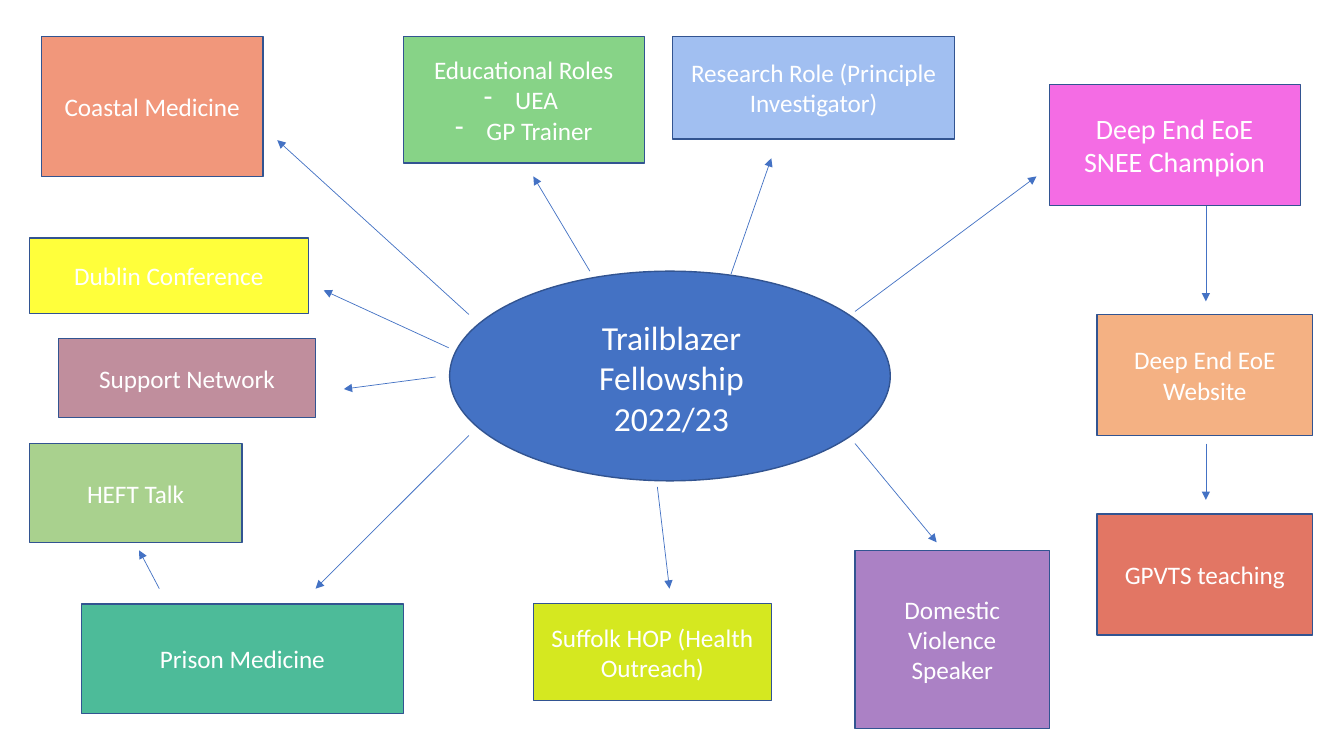
import dataclasses

import lxml.etree
import pptx
import pptx.dml.color
import pptx.enum.shapes
import pptx.enum.text
import pptx.oxml.ns
import pptx.util

PX = 9144  # 100 px to the inch
SHAPE = pptx.enum.shapes.MSO_SHAPE
ALIGN = pptx.enum.text.PP_ALIGN
FRAME = {
    "word_wrap": True,
    "auto_size": pptx.enum.text.MSO_AUTO_SIZE.NONE,
    "vertical_anchor": pptx.enum.text.MSO_ANCHOR.MIDDLE,
}


@dataclasses.dataclass(frozen=True)
class Theme:
    font: str = "Calibri"
    text: str = "FFFFFF"
    hub: str = "4472C4"
    edge: str = "325491"
    link: str = "4472C4"
    champ: str = "F46CE4"
    title: int = 24
    large: int = 20
    body: int = 18
    border: float = 1
    arrow: float = 0.5


THEME = Theme()

HUB = (446, 269, 437, 208)
HUB_TEXT = (543, 309, 246, 131)
CHAMP = (1041, 84, 249, 120)
CHAMP_TEXT = (1058, 105, 214, 77)

# Box, fill, heading, dashed items
NODES = [
    ((1088, 312, 214, 120), "F4B183", "Deep End EoE Website", ()),
    ((81, 599, 319, 109), "4DBB99", "Prison Medicine", ()),
    ((529, 599, 236, 96), "D5E820", "Suffolk HOP (Health Outreach)", ()),
    ((1088, 510, 214, 120), "E27664", "GPVTS teaching", ()),
    ((29, 440, 211, 98), "A9D18E", "HEFT Talk", ()),
    ((848, 546, 193, 177), "AB81C5", "Domestic Violence Speaker", ()),
    ((667, 36, 280, 102), "A1BFF1", "Research Role (Principle Investigator)", ()),
    ((400, 36, 239, 126), "87D387", "Educational Roles", ("UEA ", "GP Trainer")),
    ((41, 36, 220, 139), "F1977B", "Coastal Medicine", ()),
    ((29, 236, 277, 75), "FFFF3B", "Dublin Conference", ()),
    ((58, 336, 255, 78), "C08E9D", "Support Network", ()),
]

# Start x, start y, end x, end y
ARROWS = [
    (848, 309, 1028, 175),
    (1196, 204, 1196, 299),
    (465, 432, 313, 584),
    (652, 483, 664, 584),
    (1196, 440, 1196, 496),
    (158, 584, 138, 546),
    (848, 440, 929, 538),
    (725, 272, 765, 157),
    (585, 269, 529, 175),
    (465, 312, 275, 139),
    (445, 345, 321, 288),
    (432, 374, 341, 386),
]


def scale(spots):
    return [spot * PX for spot in spots]


def color(code):
    return pptx.dml.color.RGBColor.from_string(code)


def apply(target, values):
    for name, value in values.items():
        setattr(target, name, value)


def add_tag(parent, name, **values):
    return lxml.etree.SubElement(parent, pptx.oxml.ns.qn(name), values)


def write(frame, text, size, items=()):
    """Fill a frame with centred text and, below it, dashed items."""
    apply(frame, FRAME)
    frame.text = "\n".join((text, *items))
    for para in frame.paragraphs:
        para.alignment = ALIGN.CENTER
        font = para.runs[0].font
        apply(font, {"name": THEME.font, "size": pptx.util.Pt(size)})
        font.color.rgb = color(THEME.text)
    for para in frame.paragraphs[1:]:
        props = para._p.get_or_add_pPr()
        props.set("marL", str(31 * PX))
        props.set("indent", str(-31 * PX))
        add_tag(props, "a:buFontTx")
        add_tag(props, "a:buChar", char="-")


def add_block(slide, kind, box, fill):
    block = slide.shapes.add_shape(kind, *scale(box))
    block.shadow.inherit = False
    block.fill.solid()
    block.fill.fore_color.rgb = color(fill)
    block.line.color.rgb = color(THEME.edge)
    block.line.width = pptx.util.Pt(THEME.border)
    return block


def add_node(slide, box, fill, text, items):
    block = add_block(slide, SHAPE.RECTANGLE, box, fill)
    write(block.text_frame, text, THEME.body, items)


def add_label(slide, box, text, size):
    label = slide.shapes.add_textbox(*scale(box))
    write(label.text_frame, text, size)


def add_arrow(slide, ends):
    arrow = slide.shapes.add_connector(
        pptx.enum.shapes.MSO_CONNECTOR.STRAIGHT, *scale(ends))
    arrow.line.color.rgb = color(THEME.link)
    arrow.line.width = pptx.util.Pt(THEME.arrow)
    add_tag(arrow.line._get_or_add_ln(), "a:tailEnd", type="triangle")
    add_tag(arrow.element.spPr, "a:effectLst")


def add_hub(slide):
    """Draw the ellipse and bring the slide title in front of it."""
    add_block(slide, SHAPE.OVAL, HUB, THEME.hub)
    title = slide.shapes.title
    apply(title, dict(zip(("left", "top", "width", "height"), scale(HUB_TEXT))))
    write(title.text_frame, "Trailblazer Fellowship 2022/23", THEME.title)
    slide.shapes.element.append(title.element)


def main():
    deck = pptx.Presentation()
    apply(deck, {"slide_width": 1333 * PX, "slide_height": 750 * PX})
    slide = deck.slides.add_slide(deck.slide_layouts.get_by_name("Title Only"))
    add_hub(slide)
    add_block(slide, SHAPE.RECTANGLE, CHAMP, THEME.champ)
    add_label(slide, CHAMP_TEXT, "Deep End EoE SNEE Champion", THEME.large)
    for node in NODES:
        add_node(slide, *node)
    for ends in ARROWS:
        add_arrow(slide, ends)
    deck.save("out.pptx")


if __name__ == "__main__":
    main()
